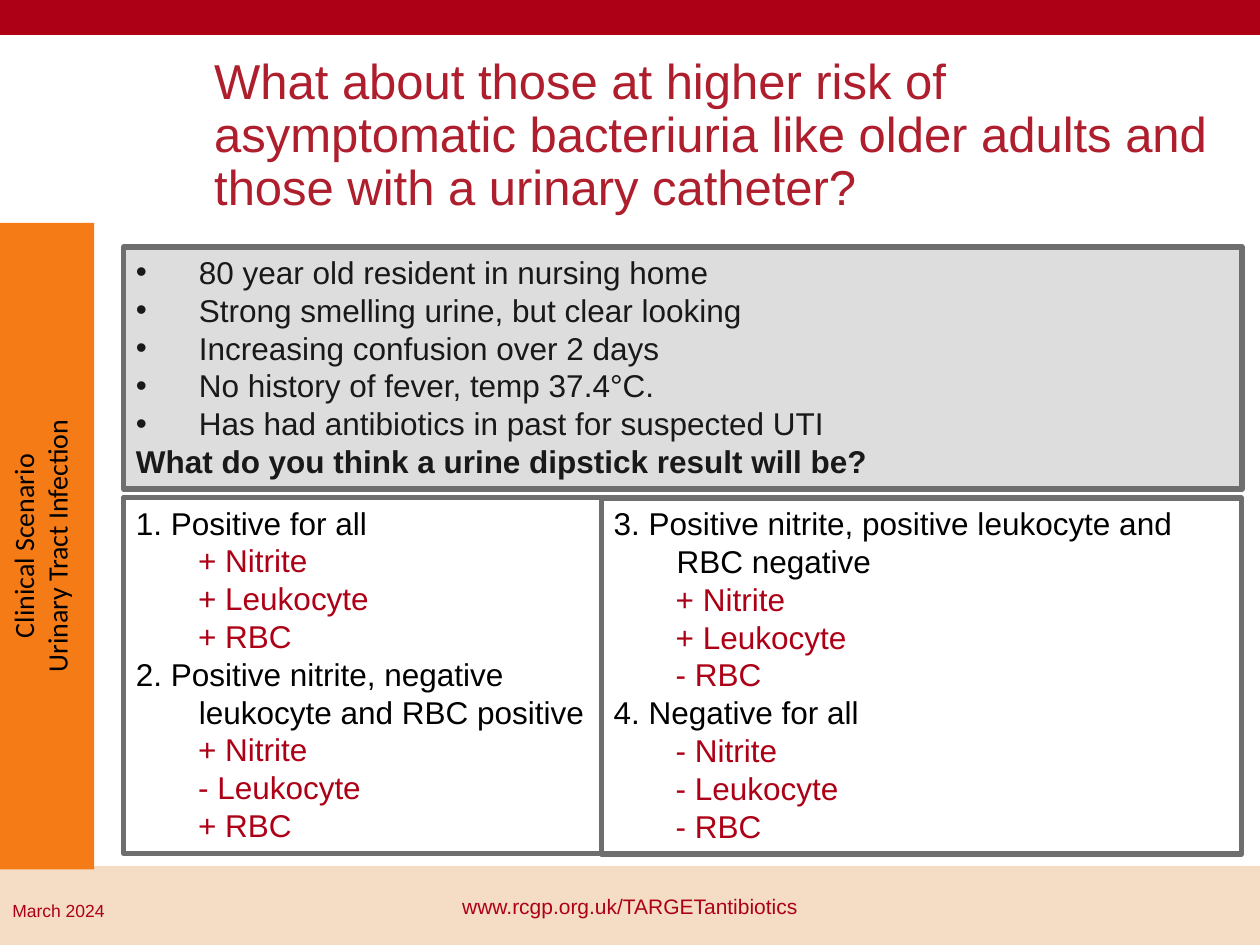
"""Build the clinical scenario slide on urine dipstick results."""
from dataclasses import dataclass
from typing import Optional

from lxml import etree
from pptx import Presentation
from pptx.dml.color import RGBColor
from pptx.enum.shapes import MSO_SHAPE
from pptx.enum.text import MSO_ANCHOR, MSO_AUTO_SIZE, PP_ALIGN
from pptx.oxml.ns import qn
from pptx.util import Pt

RECT = MSO_SHAPE.RECTANGLE
TOP, MIDDLE = MSO_ANCHOR.TOP, MSO_ANCHOR.MIDDLE
LEFT, CENTER = PP_ALIGN.LEFT, PP_ALIGN.CENTER
NO_FIT = MSO_AUTO_SIZE.NONE
RED, SAND, GRAY, BLACK, INK = "AD0016", "F4DDC4", "6E6E6E", "000000", "191919"


@dataclass
class Box:
    left: float
    top: float
    width: float
    height: float
    fill: Optional[str] = None
    line: Optional[str] = None
    weight: float = 1


@dataclass
class Choice:
    label: str
    signs: str


def color(code: str) -> RGBColor:
    return RGBColor.from_string(code)


def draw(slide, box: Box):
    shape = slide.shapes.add_shape(
        RECT, Pt(box.left), Pt(box.top), Pt(box.width), Pt(box.height))
    shape.shadow.inherit = False
    if box.fill:
        shape.fill.solid()
        shape.fill.fore_color.rgb = color(box.fill)
    else:
        shape.fill.background()
    if box.line:
        shape.line.color.rgb = color(box.line)
        shape.line.width = Pt(box.weight)
    else:
        shape.line.fill.background()
    frame = shape.text_frame
    frame.word_wrap = True
    frame.vertical_anchor = TOP
    return frame


def write(frame, text: str, *, size: float = 18, face: str = "Arial",
          ink: str = BLACK, bold: bool = False, align=LEFT, margin: float = 0,
          indent: float = 0, bullet: str = "", spacing: float = 1):
    first = frame.paragraphs[0]
    para = frame.add_paragraph() if first.runs else first
    para.alignment = align
    para.line_spacing = spacing
    props = para._p.get_or_add_pPr()
    props.set("marL", str(Pt(margin)))
    props.set("indent", str(Pt(indent)))
    if bullet:
        etree.SubElement(props, qn("a:buFont")).set("typeface", "Arial")
        etree.SubElement(props, qn("a:buChar")).set("char", bullet)
    else:
        etree.SubElement(props, qn("a:buNone"))
    run = para.add_run()
    run.text = text
    font = run.font
    font.size, font.name, font.bold = Pt(size), face, bold
    font.color.rgb = color(ink)


def head(slide, text: str):
    title = slide.shapes.title
    title.left, title.top = Pt(115.2), Pt(29.5)
    title.width, title.height = Pt(595.4), Pt(97.2)
    frame = title.text_frame
    frame.word_wrap = True
    frame.auto_size = NO_FIT
    frame.vertical_anchor = MIDDLE
    write(frame, text, size=28, ink="AF1E2C", spacing=0.9)


def panel(slide, box: Box, choices: list[Choice]):
    frame = draw(slide, box)
    for choice in choices:
        write(frame, choice.label, margin=36, indent=-36)
        for sign, name in zip(choice.signs, ("Nitrite", "Leukocyte", "RBC")):
            write(frame, f"{sign} {name}", ink=RED, margin=35.5)


def main():
    deck = Presentation()
    deck.slide_width, deck.slide_height = Pt(720), Pt(540)
    slide = deck.slides.add_slide(deck.slide_layouts[5])

    draw(slide, Box(0, 495.4, 720, 44.6, SAND, SAND))
    draw(slide, Box(0, -0.7, 720, 20.2, RED, RED))
    date = draw(slide, Box(0, 510.5, 125.3, 28.8, SAND))
    write(date, "March 2024", size=10, ink=RED)
    link = draw(slide, Box(239.8, 506.9, 240.5, 21.6))
    write(link, "www.rcgp.org.uk/TARGETantibiotics", size=12, ink=RED,
          align=CENTER)

    head(slide, "What about those at higher risk of asymptomatic bacteriuria "
                "like older adults and those with a urinary catheter?")

    side = draw(slide, Box(0, 127.4, 53.8, 369.4, "F57B17"))
    side._txBody.bodyPr.set("vert", "vert270")
    for text in ("Clinical Scenario", "Urinary Tract Infection"):
        write(side, text, size=16, face="Calibri", align=CENTER)

    case = draw(slide, Box(70.6, 141.1, 639.2, 138.4, "DDDDDD", GRAY, 3))
    for fact in ("80 year old resident in nursing home",
                 "Strong smelling urine, but clear looking",
                 "Increasing confusion over 2 days",
                 "No history of fever, temp 37.4°C.",
                 "Has had antibiotics in past for suspected UTI"):
        write(case, fact, ink=INK, margin=36, indent=-36, bullet="•")
    write(case, "What do you think a urine dipstick result will be?",
          ink=INK, bold=True)

    panel(slide, Box(70.6, 284.2, 273, 203.5, line=GRAY, weight=3), [
        Choice("1. Positive for all", "+++"),
        Choice("2. Positive nitrite, negative leukocyte and RBC positive",
               "+-+")])
    panel(slide, Box(343.6, 284.6, 366, 203.5, line=GRAY, weight=3), [
        Choice("3. Positive nitrite, positive leukocyte and RBC negative",
               "++-"),
        Choice("4. Negative for all", "---")])
    deck.save("out.pptx")


if __name__ == "__main__":
    main()
